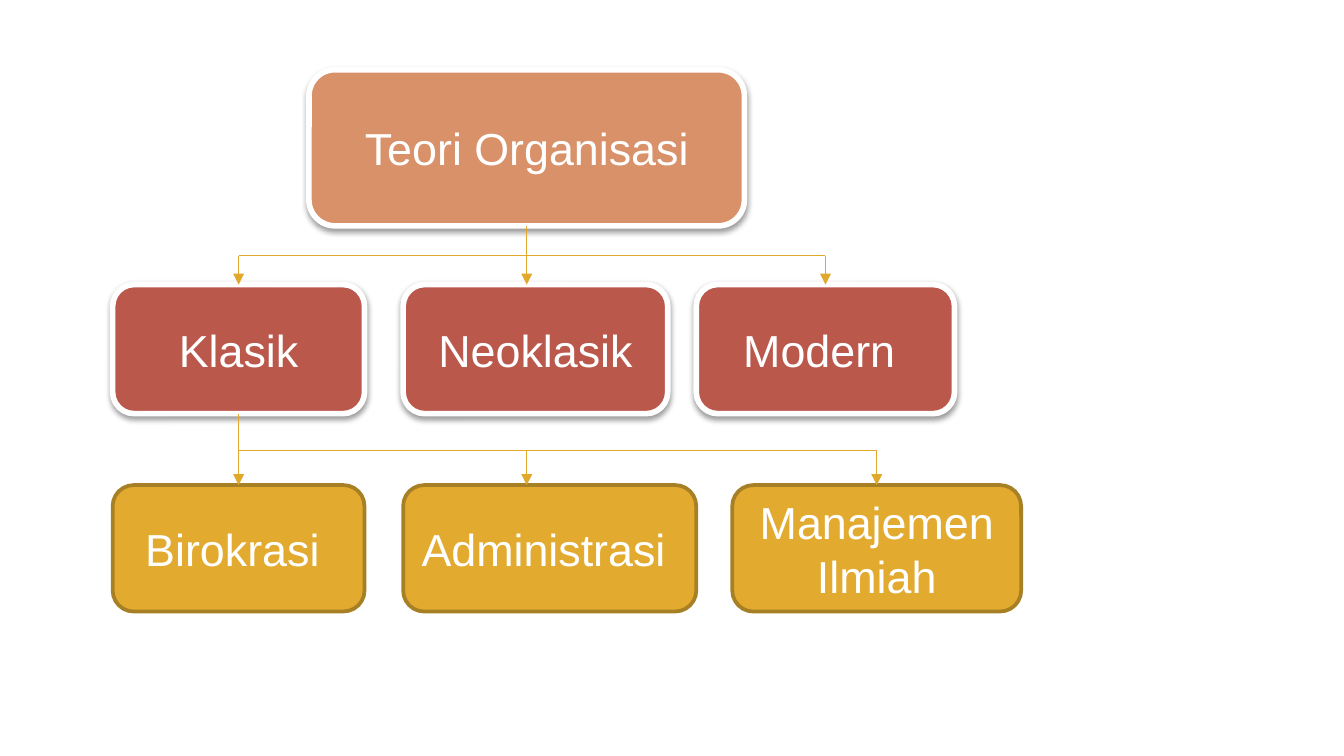
from lxml.etree import SubElement
from pptx import Presentation
from pptx.dml.color import RGBColor
from pptx.enum.shapes import MSO_CONNECTOR as Link, MSO_SHAPE as Preset
from pptx.enum.text import MSO_ANCHOR as Anchor, PP_ALIGN as Align
from pptx.oxml.ns import qn
from pptx.util import Cm, Pt

WHITE = RGBColor(0xFF, 0xFF, 0xFF)
ORANGE = RGBColor(0xD8, 0x91, 0x68)
RED = RGBColor(0xBB, 0x58, 0x4C)
GOLD = RGBColor(0xE2, 0xAB, 0x30)
BROWN = RGBColor(0xA7, 0x7F, 0x24)
ARROW_GOLD = RGBColor(0xE1, 0xA9, 0x2B)

FRAME_FORMAT = {
    "word_wrap": True, "vertical_anchor": Anchor.MIDDLE,
    "margin_left": Cm(0.18), "margin_right": Cm(0.18),
    "margin_top": Cm(0.1), "margin_bottom": Cm(0.1),
}
FONT_FORMAT = {"name": "Arial", "size": Pt(24)}
SHADOW_FORMAT = {"blurRad": Pt(3.1), "dist": Pt(1.6), "dir": 90 * 60000, "rotWithShape": 0}

ROOT_STYLE = {"fill": ORANGE, "edge": WHITE, "weight": 3, "shadow": True}
SCHOOL_STYLE = {"fill": RED, "edge": WHITE, "weight": 3, "shadow": True}
BRANCH_STYLE = {"fill": GOLD, "edge": BROWN, "weight": 2, "shadow": False}


def apply(target, formats):
    """Set each named attribute of the target."""
    for name, value in formats.items():
        setattr(target, name, value)


def cast_shadow(node):
    """Give a node a soft black shadow below it."""
    effects = node._element.spPr.find(qn("a:effectLst"))
    shadow = SubElement(effects, qn("a:outerShdw"),
                        {key: str(value) for key, value in SHADOW_FORMAT.items()})
    tint = SubElement(shadow, qn("a:srgbClr"), val="000000")
    SubElement(tint, qn("a:alpha"), val="38000")


def add_node(slide, label, left, top, width, height, style):
    """Place one labelled rounded box and return it."""
    node = slide.shapes.add_shape(Preset.ROUNDED_RECTANGLE, left, top, width, height)
    node.shadow.inherit = False
    node.fill.solid()
    node.fill.fore_color.rgb = style["fill"]
    node.line.color.rgb = style["edge"]
    node.line.width = Pt(style["weight"])
    if style["shadow"]:
        cast_shadow(node)
    frame = node.text_frame
    apply(frame, FRAME_FORMAT)
    frame.text = label
    caption = frame.paragraphs[0]
    caption.alignment = Align.CENTER
    apply(caption.font, FONT_FORMAT)
    caption.font.color.rgb = WHITE
    return node


def add_level(slide, top, height, entries, style):
    """Place one level of the chart from (label, left, width) entries."""
    return [add_node(slide, label, Cm(left), top, Cm(width), height, style)
            for label, left, width in entries]


def add_link(slide, start, end, arrow=False):
    """Draw one thin gold line, with an arrowhead at its end if asked."""
    link = slide.shapes.add_connector(Link.STRAIGHT, *start, *end)
    link.line.color.rgb = ARROW_GOLD
    link.line.width = Pt(0.75)
    if arrow:
        SubElement(link.line._get_or_add_ln(), qn("a:tailEnd"), type="triangle")
    SubElement(link._element.spPr, qn("a:effectLst"))
    return link


def centre(node):
    """Return the horizontal centre of a node."""
    return node.left + node.width // 2


def add_fork(slide, parent, children, rail_top, middle):
    """Link a parent to three children through a horizontal rail."""
    drops = [centre(children[0]), middle, centre(children[-1])]
    add_link(slide, (drops[0], rail_top), (drops[-1], rail_top))
    for child, drop in zip(children, drops):
        is_trunk = drop == centre(parent)
        start = parent.top + parent.height if is_trunk else rail_top
        link = add_link(slide, (drop, start), (drop, child.top), arrow=True)
        if is_trunk:
            link.begin_connect(parent, 2)
        if drop == centre(child):
            link.end_connect(child, 0)


def main():
    """Build the organisation theory chart."""
    deck = Presentation()
    apply(deck, {"slide_width": Cm(25.4), "slide_height": Cm(14.29)})
    slide = deck.slides.add_slide(deck.slide_layouts[6])

    [theory] = add_level(slide, Cm(1.32), Cm(2.95),
                         [("Teori Organisasi", 5.84, 8.23)], ROOT_STYLE)
    schools = add_level(slide, Cm(5.38), Cm(2.44), [
        ("Klasik", 2.13, 4.76), ("Neoklasik", 7.62, 5), ("Modern ", 13.16, 4.88),
    ], SCHOOL_STYLE)
    branches = add_level(slide, Cm(9.17), Cm(2.39), [
        ("Birokrasi ", 2.13, 4.76), ("Administrasi ", 7.62, 5.54),
        ("Manajemen Ilmiah", 13.84, 5.46),
    ], BRANCH_STYLE)

    add_fork(slide, theory, schools, Cm(4.83), centre(theory))
    add_fork(slide, schools[0], branches, Cm(8.51), centre(theory))
    deck.save("out.pptx")


if __name__ == "__main__":
    main()
